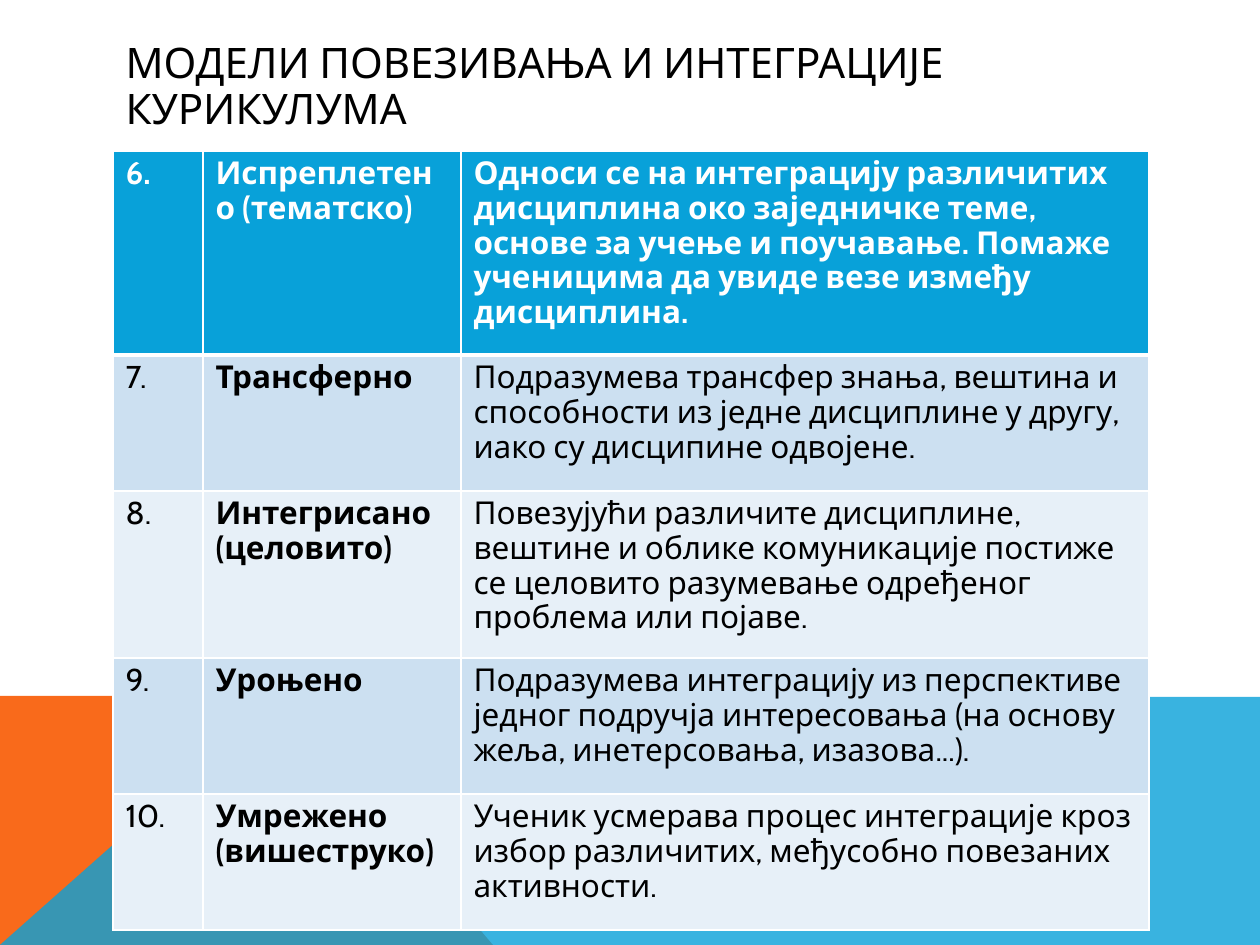
from typing import NamedTuple

from lxml import etree
from pptx import Presentation
from pptx.dml.color import RGBColor
from pptx.enum.text import MSO_ANCHOR, MSO_AUTO_SIZE, PP_ALIGN
from pptx.oxml.ns import qn
from pptx.util import Pt

LEFT = PP_ALIGN.LEFT
TOP, MIDDLE = MSO_ANCHOR.TOP, MSO_ANCHOR.MIDDLE
NO_FIT = MSO_AUTO_SIZE.NONE

FONT = "Cabin"
COLORS = {
    "text": "000000",
    "white": "FFFFFF",
    "orange": "F96A1B",
    "blue": "08A1D9",
    "band_dark": "CCE0F1",
    "band_light": "E7F0F8",
}
PX_PER_INCH = 126
SLIDE_W, SLIDE_H = 1260, 945


class Model(NamedTuple):
    number: str
    name: str
    description: str


class Band(NamedTuple):
    points: list[tuple[int, int]]
    color: str
    alpha: int = 100


TITLE = "МОДЕЛИ ПОВЕЗИВАЊА И ИНТЕГРАЦИЈЕ КУРИКУЛУМА"
MODELS = [
    Model("6.", "Испреплетено (тематско)",
          "Односи се на интеграцију различитих дисциплина око заједничке теме, "
          "основе за учење и поучавање. Помаже ученицима да увиде везе између дисциплина."),
    Model("7.", "Трансферно",
          "Подразумева трансфер знања, вештина и способности из једне дисциплине у другу, "
          "иако су дисципине одвојене."),
    Model("8.", "Интегрисано (целовито)",
          "Повезујући различите дисциплине, вештине и облике комуникације постиже се "
          "целовито разумевање одређеног проблема или појаве."),
    Model("9.", "Уроњено",
          "Подразумева интеграцију из перспективе једног подручја интересовања "
          "(на основу жеља, инетерсовања, изазова...)."),
    Model("10.", "Умрежено (вишеструко)",
          "Ученик усмерава процес интеграције кроз избор различитих, "
          "међусобно повезаних активности."),
]
BANDS = [
    Band([(0, 945), (0, 696), (281, 696), (493, 945)], "orange"),
    Band([(0, 945), (281, 696), (1260, 697), (1260, 945)], "blue", 80),
]
COL_WIDTHS = [90, 258, 688]
ROW_HEIGHTS = [204, 136, 167, 136, 136]


def px(n: int) -> int:
    return round(n * 914400 / PX_PER_INCH)


def rgb(name: str) -> RGBColor:
    return RGBColor.from_string(COLORS[name])


def write(tf, text: str, *, size: int, color: str = "text", bold: bool = False) -> None:
    tf.word_wrap = True
    p = tf.paragraphs[0]
    p.alignment = LEFT
    p.line_spacing = 0.9
    r = p.add_run()
    r.text = text
    r.font.name = FONT
    r.font.size = Pt(size)
    r.font.bold = bold
    r.font.color.rgb = rgb(color)


def draw_band(s, band: Band) -> None:
    fb = s.shapes.build_freeform(*map(px, band.points[0]), scale=1.0)
    fb.add_line_segments([(px(x), px(y)) for x, y in band.points[1:]], close=True)
    sp = fb.convert_to_shape()
    sp.shadow.inherit = False
    sp.line.fill.background()
    sp.fill.solid()
    sp.fill.fore_color.rgb = rgb(band.color)
    if band.alpha < 100:
        clr = sp.element.spPr.find(qn("a:solidFill")).find(qn("a:srgbClr"))
        etree.SubElement(clr, qn("a:alpha"), val=str(band.alpha * 1000))


def add_borders(cell, top: int, bottom: int) -> None:
    tc_pr = cell._tc.get_or_add_tcPr()
    for side, width in (("L", 1), ("R", 1), ("T", top), ("B", bottom)):
        ln = etree.SubElement(tc_pr, qn(f"a:ln{side}"), w=str(Pt(width)))
        fill = etree.SubElement(ln, qn("a:solidFill"))
        etree.SubElement(fill, qn("a:srgbClr"), val=COLORS["white"])


def draw_table(s, models: list[Model]) -> None:
    frame = s.shapes.add_table(len(models), len(COL_WIDTHS), px(113), px(151),
                               px(sum(COL_WIDTHS)), px(sum(ROW_HEIGHTS)))
    table = frame.table
    for col, width in zip(table.columns, COL_WIDTHS):
        col.width = px(width)
    for i, model in enumerate(models):
        table.rows[i].height = px(ROW_HEIGHTS[i])
        header = i == 0
        fill = "blue" if header else ("band_light", "band_dark")[i % 2]
        for j, text in enumerate(model):
            cell = table.cell(i, j)
            add_borders(cell, top=3 if i == 1 else 1, bottom=3 if header else 1)
            cell.fill.solid()
            cell.fill.fore_color.rgb = rgb(fill)
            cell.vertical_anchor = TOP
            write(cell.text_frame, text, size=18,
                  color="white" if header else "text", bold=header or j == 1)


def draw_title(s, text: str) -> None:
    title = s.shapes.title
    title.left, title.top, title.width, title.height = map(px, (113, 50, 1036, 76))
    tf = title.text_frame
    tf.auto_size = NO_FIT
    tf.vertical_anchor = MIDDLE
    write(tf, text, size=24)
    s.shapes.element.append(title.element)  # bring in front of the bands


def main() -> None:
    prs = Presentation()
    prs.slide_width, prs.slide_height = px(SLIDE_W), px(SLIDE_H)
    s = prs.slides.add_slide(prs.slide_layouts[5])
    for band in BANDS:
        draw_band(s, band)
    draw_title(s, TITLE)
    draw_table(s, MODELS)
    prs.save("out.pptx")


if __name__ == "__main__":
    main()
